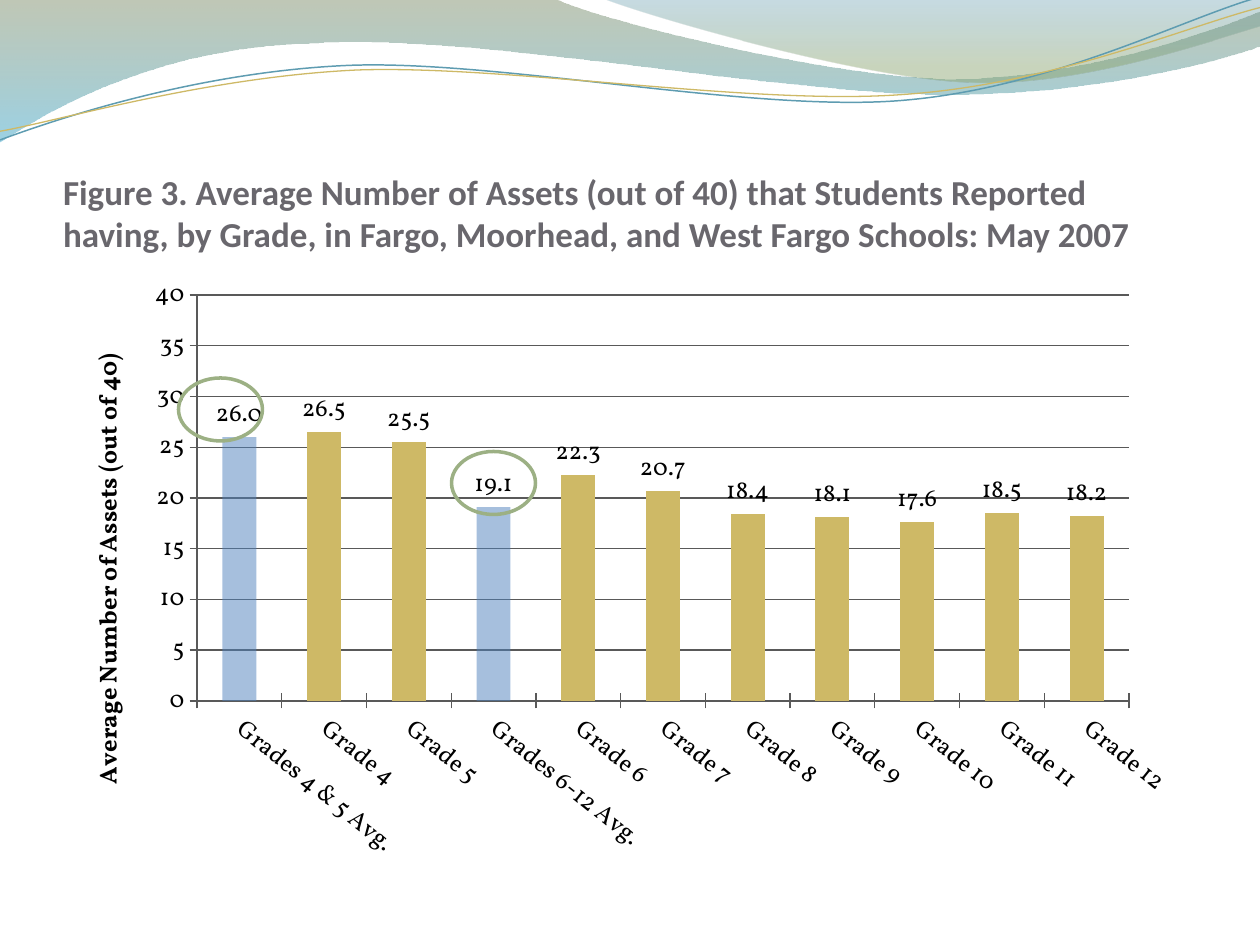
"""Build the slide charting average assets by school grade."""
from math import cos, radians, sin

from lxml.etree import SubElement
from pptx import Presentation
from pptx.chart.data import CategoryChartData
from pptx.dml.color import RGBColor
from pptx.enum.chart import XL_CHART_TYPE as ChartType, XL_LABEL_POSITION as LabelPosition
from pptx.enum.chart import XL_TICK_MARK as TickMark
from pptx.enum.shapes import MSO_SHAPE as Shape
from pptx.enum.text import MSO_ANCHOR as Anchor, MSO_AUTO_SIZE as AutoSize, PP_ALIGN as Align
from pptx.oxml.ns import qn
from pptx.util import Pt

THEME = {
    "title_font": "Calibri", "title_size": 20, "title": "69676D",
    "chart_font": "Vollkorn", "chart_size": 14, "text": "000000", "axis": "595959",
    "bar": "CEB966", "average": "4F81BD", "ring": "9CB084",
}
TITLE = ("Figure 3. Average Number of Assets (out of 40) that Students Reported having, "
         "by Grade, in Fargo, Moorhead, and West Fargo Schools: May 2007")
AXIS_TITLE = "Average Number of Assets (out of 40)"
AVERAGES = [
    ("Grades 4 & 5 Avg.", 26.0), ("Grade 4", 26.5), ("Grade 5", 25.5),
    ("Grades 6-12 Avg.", 19.1), ("Grade 6", 22.3), ("Grade 7", 20.7),
    ("Grade 8", 18.4), ("Grade 9", 18.1), ("Grade 10", 17.6),
    ("Grade 11", 18.5), ("Grade 12", 18.2),
]
CHART_BOX = (36, 152.6, 648, 345.6)
PLOT_BOX = {"x": 76.6, "y": 16, "w": 532.6, "h": 232}
AXIS_TITLE_SPOT = {"x": 13, "y": 46.7}
RINGS = [(102, 216), (258, 258)]
RING_SIZE = (48, 36)
TILT = -2.7
TILT_CENTER = (359.3, 41.5)

WAVES = [
    {"start": (0, 0),
     "segments": [[(317, -0.7)], [(343, 12), (478, 45), (546, 45)],
                  [(614, 45), (690, 19), (720, 6.5)], [(720.7, 26)],
                  [(708, 32), (626, 55), (537, 54)], [(448, 54), (275, 20), (185, 24.5)],
                  [(93, 26), (33, 60), (-0.7, 81.4)]],
     "stops": [(0, "74855E", 45), (1, "4AACCE", 55)]},
    {"start": (345, -0.7),
     "segments": [[(366, 8), (491, 45), (554, 47)], [(616, 50), (692, 23), (720, 15)],
                  [(720, 0)]],
     "stops": [(0, "45889F", 30), (0.8, "8AA36D", 45)]},
    {"start": (0, 80),
     "segments": [[(35, 67), (114, 41), (199, 37.4)], [(284, 34), (427, 64), (513, 57.6)],
                  [(600, 51), (675, 11), (718.6, -1.4)]],
     "line": ("5E9CB1", 0.85)},
    {"start": (0, 75),
     "segments": [[(34, 69), (118, 44), (204, 40)], [(290, 37), (430, 60.5), (516, 54)],
                  [(602, 48.2), (678, 15), (720, 4.3)]],
     "line": ("CEB966", 0.75)},
]


def color(value):
    return RGBColor.from_string(value)


def set_line(line, value, width):
    line.color.rgb = color(value)
    line.width = Pt(width)


def set_opacity(fill, percents):
    for element, percent in zip(fill._xPr.iter(qn("a:srgbClr")), percents):
        SubElement(element, qn("a:alpha"), val=str(percent * 1000))


def turned(point, degrees):
    (x, y), (center_x, center_y), angle = point, TILT_CENTER, radians(degrees)
    across, down = x - center_x, y - center_y
    return (Pt(center_x + across * cos(angle) - down * sin(angle)),
            Pt(center_y + across * sin(angle) + down * cos(angle)))


def build_curve(slide, start, segments, tilt, close):
    start = turned(start, -tilt)
    segments = [[turned(point, -tilt) for point in segment] for segment in segments]
    builder = slide.shapes.build_freeform(*start)
    builder.add_line_segments([segment[-1] for segment in segments], close=close)
    shape = builder.convert_to_shape()
    lines = list(shape._element.iter(qn("a:lnTo")))
    for line, segment in zip(lines, segments):
        if len(segment) == 3:
            line.tag = qn("a:cubicBezTo")
            line.clear()
            for x, y in segment:
                SubElement(line, qn("a:pt"), x=str(x - shape.left), y=str(y - shape.top))
    shape.rotation = tilt
    shape.shadow.inherit = False
    return shape


def add_wave(slide, wave):
    is_band = "stops" in wave
    shape = build_curve(slide, wave["start"], wave["segments"], 0 if is_band else TILT, is_band)
    if not is_band:
        shape.fill.background()
        set_line(shape.line, *wave["line"])
        return
    shape.fill.gradient()
    shape.fill.gradient_angle = 270
    for stop, (position, value, _) in zip(shape.fill.gradient_stops, wave["stops"]):
        stop.position = position
        stop.color.rgb = color(value)
    set_opacity(shape.fill, [percent for _, _, percent in wave["stops"]])
    shape.line.fill.background()


def set_title(slide):
    title = slide.shapes.title
    slide.shapes._spTree.append(title._element)
    title.left, title.top, title.width, title.height = Pt(36), Pt(55.5), Pt(648), Pt(90)
    frame = title.text_frame
    frame.text = TITLE
    frame.word_wrap = True
    frame.auto_size = AutoSize.NONE
    frame.vertical_anchor = Anchor.BOTTOM
    frame.margin_left = frame.margin_right = frame.margin_bottom = 0
    frame.margin_top = Pt(3.6)
    para = frame.paragraphs[0]
    para.alignment = Align.LEFT
    font = para.runs[0].font
    font.name, font.size, font.bold = THEME["title_font"], Pt(THEME["title_size"]), True
    font.color.rgb = color(THEME["title"])


def style_font(font, bold=False):
    font.name, font.size, font.bold = THEME["chart_font"], Pt(THEME["chart_size"]), bold
    font.color.rgb = color(THEME["text"])


def set_layout(parent, index, lengths):
    for old in parent.findall(qn("c:layout")):
        parent.remove(old)
    layout = SubElement(parent, qn("c:layout"))
    parent.insert(index, layout)
    manual = SubElement(layout, qn("c:manualLayout"))
    if "w" in lengths:
        SubElement(manual, qn("c:layoutTarget"), val="inner")
    for name in ("x", "y"):
        SubElement(manual, qn(f"c:{name}Mode"), val="edge")
    width, height = CHART_BOX[2:]
    for name, length in lengths.items():
        share = length / (width if name in "xw" else height)
        SubElement(manual, qn(f"c:{name}"), val=f"{share:.4f}")


def add_assets_chart(slide):
    data = CategoryChartData(number_format="0.0")
    data.categories = [grade for grade, _ in AVERAGES]
    data.add_series("Series 1", [value for _, value in AVERAGES])
    chart = slide.shapes.add_chart(ChartType.COLUMN_CLUSTERED, *map(Pt, CHART_BOX), data).chart
    chart.has_legend = chart.has_title = False
    style_font(chart.font)
    set_layout(chart._chartSpace.chart.plotArea, 0, PLOT_BOX)

    grade_axis, asset_axis = chart.category_axis, chart.value_axis
    for axis in (grade_axis, asset_axis):
        axis.major_tick_mark = TickMark.CROSS
        axis.minor_tick_mark = TickMark.NONE
        set_line(axis.format.line, THEME["axis"], 0.75)
        style_font(axis.tick_labels.font)
    grade_axis._element.txPr.bodyPr.set("rot", str(39 * 60000))
    asset_axis.minimum_scale, asset_axis.maximum_scale, asset_axis.major_unit = 0, 40, 5
    asset_axis.tick_labels.number_format = "0"
    asset_axis.tick_labels.number_format_is_linked = False
    set_line(asset_axis.major_gridlines.format.line, THEME["axis"], 0.75)
    frame = asset_axis.axis_title.text_frame
    frame.text = AXIS_TITLE
    style_font(frame.paragraphs[0].runs[0].font, bold=True)
    frame._txBody.bodyPr.set("rot", str(-90 * 60000))
    set_layout(asset_axis.axis_title._element, 1, AXIS_TITLE_SPOT)

    plot = chart.plots[0]
    plot.gap_width = 150
    plot.vary_by_categories = False
    series = plot.series[0]
    series.format.fill.solid()
    series.format.fill.fore_color.rgb = color(THEME["bar"])
    for index, (grade, _) in enumerate(AVERAGES):
        if grade.endswith("Avg."):
            fill = series.points[index].format.fill
            fill.solid()
            fill.fore_color.rgb = color(THEME["average"])
            set_opacity(fill, [50])
    labels = series.data_labels
    labels.show_value = True
    labels.number_format, labels.number_format_is_linked = "0.0", False
    labels.position = LabelPosition.OUTSIDE_END
    style_font(labels.font)
    first = series.points[0].data_label
    first.text_frame.text = f"{AVERAGES[0][1]:.1f}"
    style_font(first.text_frame.paragraphs[0].runs[0].font)
    first.position = LabelPosition.OUTSIDE_END


def add_ring(slide, left, top):
    ring = slide.shapes.add_shape(Shape.OVAL, Pt(left), Pt(top), *map(Pt, RING_SIZE))
    ring.shadow.inherit = False
    ring.fill.background()
    set_line(ring.line, THEME["ring"], 2)


def main():
    deck = Presentation()
    deck.slide_width, deck.slide_height = Pt(720), Pt(540)
    slide = deck.slides.add_slide(deck.slide_layouts[5])
    for wave in WAVES:
        add_wave(slide, wave)
    set_title(slide)
    add_assets_chart(slide)
    for left, top in RINGS:
        add_ring(slide, left, top)
    deck.save("out.pptx")


if __name__ == "__main__":
    main()
